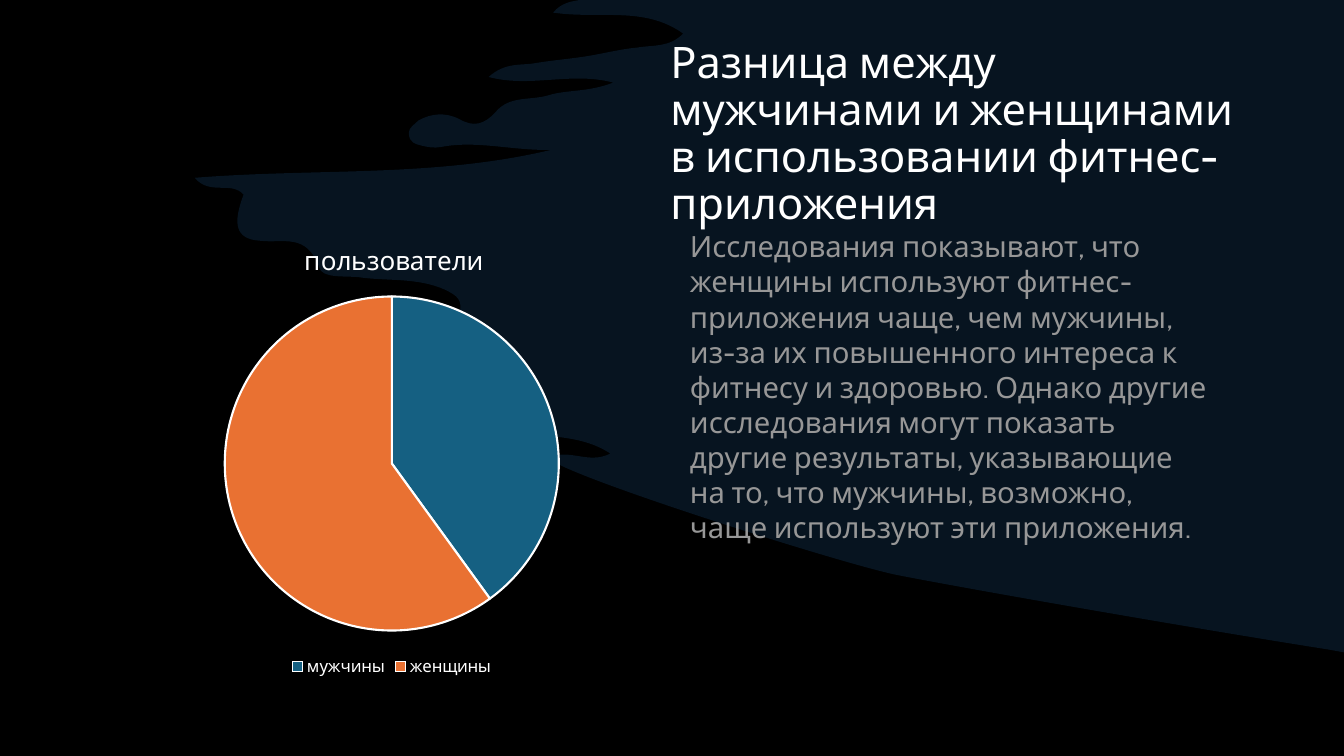
from lxml.etree import SubElement
from pptx import Presentation
from pptx.chart.data import CategoryChartData
from pptx.dml.color import RGBColor
from pptx.enum.chart import XL_CHART_TYPE, XL_LEGEND_POSITION
from pptx.enum.text import MSO_ANCHOR, MSO_AUTO_SIZE, PP_ALIGN
from pptx.oxml import parse_xml
from pptx.oxml.ns import nsdecls, qn
from pptx.util import Pt

# Content
FONT = "Cabin"
WHITE = "FFFFFF"
TITLE = "Разница между мужчинами и женщинами в использовании фитнес-приложения"
BODY = ("Исследования показывают, что женщины используют фитнес-приложения "
        "чаще, чем мужчины, из-за их повышенного интереса к фитнесу и "
        "здоровью. Однако другие исследования могут показать другие "
        "результаты, указывающие на то, что мужчины, возможно, чаще "
        "используют эти приложения.")
HEAD = "пользователи"
SERIES = "Series 1"
USERS = [("мужчины", 40, "156082"), ("женщины", 60, "E97132")]

# Places in points: left, top, width, height
TITLE_BOX = (471.6, 21.8, 421.9, 149)
CHART_BOX = (85.5, 159.5, 388.8, 326.9)
BODY_BOX = (485.8, 159.8, 388.8, 326.9)

# Brush stroke: each row is two control points and an end point
CORNER, START, END = (960, 0), (414, 0), (960, 466)
LEFT = 139
CURVES = [
    (408, 1, 401, 2, 395, 9), (428, 14, 460, 4, 488, 24),
    (478, 34, 467, 32, 455, 34), (444, 35, 432, 38, 420, 40),
    (408, 42, 395, 43, 383, 45), (373, 47, 361, 44, 349, 55),
    (379, 63, 408, 51, 438, 59), (420, 66, 405, 64, 392, 68),
    (379, 72, 364, 68, 354, 80), (346, 89, 338, 91, 328, 85),
    (318, 80, 308, 81, 299, 86), (296, 89, 292, 91, 292, 95),
    (292, 102, 297, 103, 301, 104), (305, 105, 310, 106, 315, 105),
    (341, 100, 367, 108, 394, 107), (310, 127, 226, 120, LEFT, 127),
    (150, 140, 165, 129, 174, 139), (166, 160, 168, 171, 186, 172),
    (202, 174, 219, 166, 228, 191), (230, 199, 246, 197, 256, 198),
    (276, 201, 298, 198, 318, 207), (326, 211, 331, 214, 328, 224),
    (323, 234, 328, 238, 336, 242), (341, 245, 348, 244, 352, 253),
    (308, 252, 266, 245, 222, 252), (270, 269, 322, 269, 369, 289),
    (367, 297, 356, 293, 356, 304), (380, 315, 410, 307, 436, 324),
    (420, 332, 407, 320, 392, 327), (397, 338, 605, 404, 642, 411),
    (704, 423, 860, 450, 949, 464),
]


def color(code):
    return RGBColor.from_string(code)


def style(font, size, code):
    font.name, font.size, font.bold = FONT, Pt(size), False
    font.color.rgb = color(code)


def write(par, text, size, code):
    run = par.add_run()
    run.text = text
    style(run.font, size, code)


def bend(shape):
    """Give the lines between START and END their control points."""
    lines = list(shape._element.iter(qn("a:lnTo")))[1:]
    for line, (a, b, c, d, _, _) in zip(lines, CURVES):
        line.tag = qn("a:cubicBezTo")
        for i, (x, y) in enumerate([(a, b), (c, d)]):
            dot = SubElement(line, qn("a:pt"))
            dot.set("x", str(x - LEFT))
            dot.set("y", str(y))
            line.insert(i, dot)


def layout(owner, index, **parts):
    """Fix the place of a chart part as shares of the chart."""
    for old in owner.findall(qn("c:layout")):
        owner.remove(old)
    node = parse_xml(f'<c:layout {nsdecls("c")}><c:manualLayout/></c:layout>')
    owner.insert(index, node)
    for tag, val in parts.items():
        SubElement(node[0], qn(f"c:{tag}")).set("val", str(val))


def box(values):
    return [Pt(v) for v in values]


def main():
    deck = Presentation()
    deck.slide_width, deck.slide_height = Pt(960), Pt(540)
    slide = deck.slides.add_slide(deck.slide_layouts[5])
    slide.background.fill.solid()
    slide.background.fill.fore_color.rgb = color("000000")
    shapes = slide.shapes

    # Brush stroke, placed behind the title
    path = shapes.build_freeform(*CORNER, scale=Pt(1))
    ends = [row[4:] for row in CURVES]
    path.add_line_segments([START, *ends, END], close=True)
    brush = path.convert_to_shape()
    bend(brush)
    brush.shadow.inherit = False
    brush.line.fill.background()
    brush.fill.solid()
    brush.fill.fore_color.rgb = color("0E2841")
    tint = brush.fill._xPr.find(qn("a:solidFill"))[0]
    SubElement(tint, qn("a:alpha")).set("val", "50000")
    shapes._spTree.insert(2, brush._element)

    # Title
    title = shapes.title
    title.left, title.top, title.width, title.height = box(TITLE_BOX)
    frame = title.text_frame
    frame.auto_size = MSO_AUTO_SIZE.NONE
    frame.word_wrap = True
    frame.vertical_anchor = MSO_ANCHOR.MIDDLE
    par = frame.paragraphs[0]
    par.alignment, par.line_spacing = PP_ALIGN.LEFT, 0.9
    write(par, TITLE, 31, WHITE)

    # Pie chart
    data = CategoryChartData()
    data.categories = [name for name, _, _ in USERS]
    data.add_series(SERIES, [share for _, share, _ in USERS])
    chart = shapes.add_chart(XL_CHART_TYPE.PIE, *box(CHART_BOX), data).chart
    style(chart.font, 10, WHITE)
    plot = chart.plots[0]
    plot.vary_by_categories = True
    for i, (_, _, code) in enumerate(USERS):
        look = plot.series[0].points[i].format
        look.fill.solid()
        look.fill.fore_color.rgb = color(code)
        look.line.color.rgb = color(WHITE)
        look.line.width = Pt(1.5)
    chart.has_title = True
    head = chart.chart_title
    write(head.text_frame.paragraphs[0], HEAD, 18.6, WHITE)
    head.include_in_layout = False
    layout(head._element, 1, xMode="edge", yMode="edge", x=0.33, y=0.03)
    layout(chart._chartSpace.chart.plotArea, 0, layoutTarget="inner",
           xMode="edge", yMode="edge", x=0.19, y=0.16, w=0.62, h=0.73)
    chart.has_legend = True
    chart.legend.position = XL_LEGEND_POSITION.BOTTOM
    chart.legend.include_in_layout = False
    style(chart.legend.font, 12, WHITE)

    # Body text
    frame = shapes.add_textbox(*box(BODY_BOX)).text_frame
    frame.word_wrap = True
    par = frame.paragraphs[0]
    par.space_after = Pt(6)
    write(par, BODY, 20.9, "979797")

    deck.save("out.pptx")


if __name__ == "__main__":
    main()
